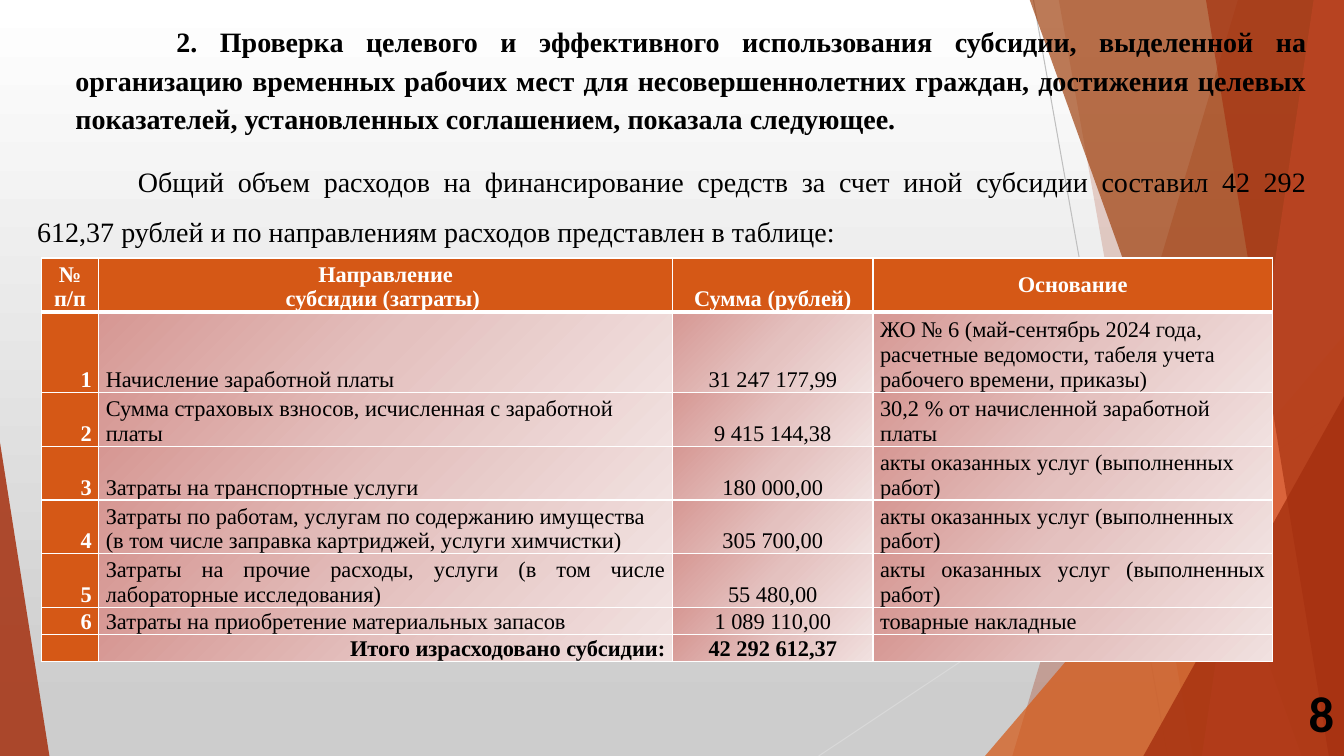
import lxml.etree
import pptx
import pptx.dml.color
import pptx.enum.shapes
import pptx.enum.text
import pptx.oxml.ns
import pptx.util

Inches = pptx.util.Inches
Pt = pptx.util.Pt
qn = pptx.oxml.ns.qn
ALIGN = pptx.enum.text.PP_ALIGN
ANCHOR = pptx.enum.text.MSO_ANCHOR

SERIF = "Times New Roman"
RUST, ORANGE, BROWN, CORAL = "A5300F", "D55816", "A04210", "EE6E4A"
CELL_STOPS = [(0, "D69793"), (50, "E4C1BF"), (100, "F1E1E0")]
BACKGROUND_STOPS = [(0, "FFFFFF"), (94, "CDCDCD")]

HEADING = (
    "2. Проверка целевого и эффективного использования субсидии, выделенной на "
    "организацию временных рабочих мест для несовершеннолетних граждан, достижения "
    "целевых показателей, установленных соглашением, показала следующее."
)
SUMMARY = (
    "Общий объем расходов на финансирование средств за счет иной субсидии составил "
    "42 292 612,37 рублей и по направлениям расходов представлен в таблице:"
)
COLUMN_WIDTHS = [0.57, 5.69, 1.99, 3.96]
ROW_HEIGHTS = [0.53, 0.79, 0.53, 0.53, 0.53, 0.53, 0.26, 0.26]
ACTS = "акты оказанных услуг (выполненных работ)"
EXPENSES = [
    ("№ п/п", "Направление\vсубсидии (затраты) ", "Сумма (рублей)", "Основание"),
    ("1", "Начисление заработной платы", "31 247 177,99",
     "ЖО № 6 (май-сентябрь 2024 года, расчетные ведомости, табеля учета рабочего времени, приказы)"),
    ("2", "Сумма страховых взносов, исчисленная с заработной платы", "9 415 144,38",
     "30,2 % от начисленной заработной платы"),
    ("3", "Затраты на транспортные услуги", "180 000,00", ACTS),
    ("4", "Затраты по работам, услугам по содержанию имущества "
     "(в том числе заправка картриджей, услуги химчистки)", "305 700,00", ACTS),
    ("5", "Затраты на прочие расходы, услуги (в том числе лабораторные исследования)",
     "55 480,00", ACTS),
    ("6", "Затраты на приобретение материальных запасов", "1 089 110,00", "товарные накладные"),
    ("", "Итого израсходовано субсидии:", "42 292 612,37", ""),
]
JUSTIFIED_ROW = 5
TOTAL_ROW = len(EXPENSES) - 1


def color(value):
    """Turn a hex string into a colour."""
    return pptx.dml.color.RGBColor.from_string(value)


def paint_solid(shape, fill_color, opacity):
    """Give a shape a translucent fill without line or shadow."""
    shape.shadow.inherit = False
    shape.line.fill.background()
    shape.fill.solid()
    shape.fill.fore_color.rgb = color(fill_color)
    tint = next(shape._element.spPr.iter(qn("a:srgbClr")))
    lxml.etree.SubElement(tint, qn("a:alpha"), val=str(opacity * 1000))


def paint_gradient(element, fill, stops, angle):
    """Give an element a linear gradient, its angle measured clockwise."""
    fill.gradient()
    fill.gradient_angle = 360 - angle
    stop_list = next(element.iter(qn("a:gsLst")))
    for stop in list(stop_list):
        stop_list.remove(stop)
    for position, value in stops:
        stop = lxml.etree.SubElement(stop_list, qn("a:gs"), pos=str(position * 1000))
        lxml.etree.SubElement(stop, qn("a:srgbClr"), val=value)


def add_line(slide, start, end, line_color):
    """Draw a thin straight line."""
    line = slide.shapes.add_connector(
        pptx.enum.shapes.MSO_CONNECTOR.STRAIGHT, *map(Inches, start + end))
    line.line.color.rgb = color(line_color)
    line.line.width = Pt(0.75)
    lxml.etree.SubElement(line._element.spPr, qn("a:effectLst"))


def add_panel(slide, top_left, bottom_left, fill_color, opacity):
    """Draw a slanted panel that reaches the right edge of the slide."""
    top, bottom, right = Inches(-0.01), Inches(7.5), Inches(13.33)
    builder = slide.shapes.build_freeform(Inches(top_left), top)
    builder.add_line_segments([(right, top), (right, bottom), (Inches(bottom_left), bottom)])
    paint_solid(builder.convert_to_shape(), fill_color, opacity)


def add_triangle(slide, box, apex, fill_color, opacity):
    """Draw a triangle whose apex is a fraction of its width."""
    triangle = slide.shapes.add_shape(
        pptx.enum.shapes.MSO_SHAPE.ISOSCELES_TRIANGLE, *map(Inches, box))
    triangle.adjustments[0] = apex
    paint_solid(triangle, fill_color, opacity)


def add_backdrop(slide):
    """Draw the background and its overlapping facets."""
    paint_gradient(slide._element, slide.background.fill, BACKGROUND_STOPS, 90)
    add_line(slide, (10.25, 0), (11.58, 7.5), "BFBFBF")
    add_line(slide, (13.33, 4.03), (8.12, 7.5), "D9D9D9")
    add_panel(slide, 12.28, 10.04, RUST, 30)
    add_panel(slide, 10.5, 11.83, RUST, 20)
    add_triangle(slide, (9.77, 3.33, 3.56, 4.17), 1, ORANGE, 72)
    add_panel(slide, 10.21, 12.91, BROWN, 70)
    add_panel(slide, 13.03, 11.92, CORAL, 70)
    add_panel(slide, 11.96, 13.18, RUST, 65)
    add_triangle(slide, (11.34, 3.93, 1.99, 3.57), 1, RUST, 80)
    add_triangle(slide, (0, 4.39, 0.49, 3.11), 0, RUST, 85)


def write(paragraph, text, size=20, font=SERIF, text_color="000000", bold=False,
          align=ALIGN.JUSTIFY, spacing=1.0, before=0, left=0, first=0):
    """Fill a paragraph with formatted text."""
    paragraph.text = text
    paragraph.alignment = align
    paragraph.line_spacing = spacing
    paragraph.space_before = Pt(before)
    properties = paragraph._p.get_or_add_pPr()
    properties.set("marL", str(Inches(left)))
    properties.set("indent", str(Inches(first)))
    for run in paragraph.runs:
        run.font.size = Pt(size)
        run.font.name = font
        run.font.bold = bold
        run.font.color.rgb = color(text_color)
    if not text:
        lxml.etree.SubElement(paragraph._p, qn("a:endParaRPr"), sz=str(size * 100))


def add_text_frame(slide, box, anchor=ANCHOR.TOP):
    """Add a wrapping text box and return its text frame."""
    frame = slide.shapes.add_textbox(*map(Inches, box)).text_frame
    frame.word_wrap = True
    frame.vertical_anchor = anchor
    return frame


def set_borders(cell, top, bottom):
    """Draw white cell borders, with top and bottom widths in points."""
    properties = cell._tc.get_or_add_tcPr()
    for index, (side, width) in enumerate(
            [("lnL", 1), ("lnR", 1), ("lnT", top), ("lnB", bottom)]):
        border = lxml.etree.Element(qn("a:" + side), w=str(Pt(width)))
        solid = lxml.etree.SubElement(border, qn("a:solidFill"))
        lxml.etree.SubElement(solid, qn("a:srgbClr"), val="FFFFFF")
        properties.insert(index, border)


def cell_alignment(row, column):
    """Choose the alignment of a table cell."""
    if row == 0 or column == 2:
        return ALIGN.CENTER
    if column == 0 or row == TOTAL_ROW:
        return ALIGN.RIGHT
    return ALIGN.JUSTIFY if row == JUSTIFIED_ROW else ALIGN.LEFT


def fill_cell(cell, row, column, text):
    """Format one cell by its place in the table."""
    accent = row == 0 or column == 0
    cell.margin_left = cell.margin_right = Inches(0.07)
    cell.margin_top = cell.margin_bottom = 0
    cell.vertical_anchor = ANCHOR.MIDDLE if (row, column) == (0, 3) else ANCHOR.BOTTOM
    write(cell.text_frame.paragraphs[0], text, size=16,
          bold=accent or row == TOTAL_ROW, align=cell_alignment(row, column),
          text_color="FFFFFF" if accent else "000000")
    if accent:
        cell.fill.solid()
        cell.fill.fore_color.rgb = color(ORANGE)
    else:
        paint_gradient(cell._tc, cell.fill, CELL_STOPS, 45)
    set_borders(cell, top=3 if row == 1 else 1, bottom=3 if row == 0 else 1)


def add_expense_table(slide):
    """Add the table of expenses."""
    table = slide.shapes.add_table(
        len(EXPENSES), len(COLUMN_WIDTHS), Inches(0.41), Inches(2.56),
        Inches(sum(COLUMN_WIDTHS)), Inches(sum(ROW_HEIGHTS))).table
    table.horz_banding = False
    for column, width in zip(table.columns, COLUMN_WIDTHS):
        column.width = Inches(width)
    for row, height in zip(table.rows, ROW_HEIGHTS):
        row.height = Inches(height)
    for row, texts in enumerate(EXPENSES):
        for column, text in enumerate(texts):
            fill_cell(table.cell(row, column), row, column, text)


def main():
    """Build and save the presentation."""
    presentation = pptx.Presentation()
    presentation.slide_width = Inches(13.33)
    presentation.slide_height = Inches(7.5)
    slide = presentation.slides.add_slide(presentation.slide_layouts[6])
    add_backdrop(slide)
    body = add_text_frame(slide, (0.27, 0.15, 12.79, 7.28))
    write(body.paragraphs[0], HEADING, bold=True, spacing=1.14, left=0.38, first=1)
    write(body.add_paragraph(), SUMMARY, spacing=1.47, before=10, first=1)
    number = add_text_frame(slide, (12.5, 6.49, 0.83, 1.16), ANCHOR.MIDDLE)
    write(number.paragraphs[0], "8", size=36, font="Calibri", bold=True, align=ALIGN.RIGHT)
    add_expense_table(slide)
    presentation.save("out.pptx")


if __name__ == "__main__":
    main()
